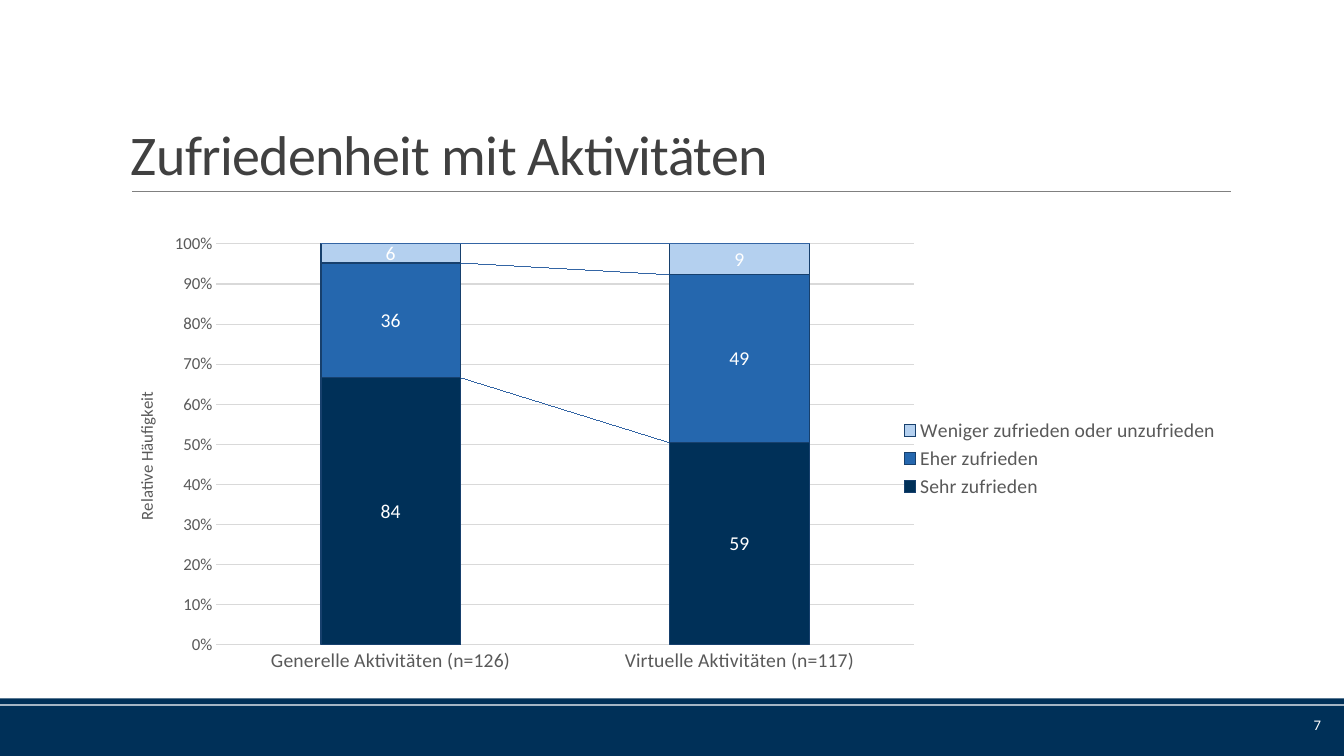
from lxml.etree import SubElement
from pptx import Presentation
from pptx.chart.data import CategoryChartData
from pptx.dml.color import RGBColor
from pptx.enum.chart import XL_CHART_TYPE, XL_LABEL_POSITION, XL_LEGEND_POSITION, XL_TICK_MARK
from pptx.enum.shapes import MSO_CONNECTOR, MSO_SHAPE
from pptx.enum.text import MSO_ANCHOR, PP_ALIGN
from pptx.oxml import parse_xml
from pptx.oxml.ns import nsdecls, qn
from pptx.util import Inches, Pt

NAVY = RGBColor(0x00, 0x30, 0x58)
BLUE = RGBColor(0x25, 0x67, 0xAE)
LIGHT_BLUE = RGBColor(0xB4, 0xD0, 0xEF)
OUTLINE = RGBColor(0x17, 0x40, 0x6D)
TITLE_GRAY = RGBColor(0x40, 0x40, 0x40)
LABEL_GRAY = RGBColor(0x59, 0x59, 0x59)
RULE_GRAY = RGBColor(0x80, 0x80, 0x80)
GRID_GRAY = RGBColor(0xD9, 0xD9, 0xD9)
WHITE = RGBColor(0xFF, 0xFF, 0xFF)

CATEGORIES = ["Generelle Aktivitäten (n=126)", "Virtuelle Aktivitäten (n=117)"]
RATINGS = [
    ("Sehr zufrieden", (84, 59), NAVY),
    ("Eher zufrieden", (36, 49), BLUE),
    ("Weniger zufrieden oder unzufrieden", (6, 9), LIGHT_BLUE),
]


class SlideBuilder:
    font_name = "Calibri"

    def __init__(self, slide):
        self.slide = slide

    def style_font(self, font, size, color):
        font.name = self.font_name
        font.size = Pt(size)
        font.bold = False
        font.color.rgb = color

    def style_line(self, line, color, width):
        line.color.rgb = color
        line.width = Pt(width)

    def band(self, top, height):
        shape = self.slide.shapes.add_shape(
            MSO_SHAPE.RECTANGLE, 0, Inches(top), Inches(13.33), Inches(height))
        shape.shadow.inherit = False
        shape.fill.solid()
        shape.fill.fore_color.rgb = NAVY
        shape.line.fill.background()

    def rule(self, left, right, top):
        connector = self.slide.shapes.add_connector(
            MSO_CONNECTOR.STRAIGHT, Inches(left), Inches(top), Inches(right), Inches(top))
        self.style_line(connector.line, RULE_GRAY, 0.5)
        SubElement(connector._element.spPr, qn("a:effectLst"))

    def text(self, box, words, size, color, anchor, alignment=PP_ALIGN.LEFT,
             line_spacing=1.0, tracking=0):
        shape = self.slide.shapes.add_textbox(*map(Inches, box))
        frame = shape.text_frame
        frame.word_wrap = True
        frame.vertical_anchor = anchor
        paragraph = frame.paragraphs[0]
        paragraph.alignment = alignment
        paragraph.line_spacing = line_spacing
        run = paragraph.add_run()
        run.text = words
        self.style_font(run.font, size, color)
        if tracking:
            run.font._element.set("spc", str(round(tracking * 100)))

    def chart_layout(self, parent, index, target="", **fractions):
        for existing in parent.findall(qn("c:layout")):
            parent.remove(existing)
        layout = parse_xml(f"<c:layout {nsdecls('c')}><c:manualLayout/></c:layout>")
        settings = {"layoutTarget": target} if target else {}
        settings.update(xMode="edge", yMode="edge", **fractions)
        for name, value in settings.items():
            SubElement(layout[0], qn(f"c:{name}")).set("val", str(value))
        parent.insert(index, layout)

    def series_lines(self, plot):
        plot._element.find(qn("c:overlap")).addnext(parse_xml(
            f"<c:serLines {nsdecls('c', 'a')}><c:spPr><a:ln w=\"9525\"><a:solidFill>"
            f"<a:srgbClr val=\"{OUTLINE}\"/></a:solidFill></a:ln></c:spPr></c:serLines>"))

    def value_axis(self, axis, title):
        axis.minimum_scale = 0
        axis.maximum_scale = 1
        axis.major_unit = 0.1
        axis.major_tick_mark = XL_TICK_MARK.NONE
        axis.tick_labels.number_format = "0%"
        axis.tick_labels.number_format_is_linked = False
        self.style_font(axis.tick_labels.font, 12, LABEL_GRAY)
        axis.format.line.fill.background()
        self.style_line(axis.major_gridlines.format.line, GRID_GRAY, 0.75)
        frame = axis.axis_title.text_frame
        frame._txBody.bodyPr.set("rot", "-5400000")
        frame._txBody.bodyPr.set("vert", "horz")
        run = frame.paragraphs[0].add_run()
        run.text = title
        self.style_font(run.font, 12, LABEL_GRAY)
        self.chart_layout(axis.axis_title._element, 1, x=0.01, y=0.35)

    def stacked_chart(self, box, categories, ratings, axis_title):
        data = CategoryChartData()
        data.categories = categories
        for name, values, _ in ratings:
            data.add_series(name, values)
        chart = self.slide.shapes.add_chart(
            XL_CHART_TYPE.COLUMN_STACKED_100, *map(Inches, box), data).chart
        chart.has_title = False
        chart.font.name = self.font_name
        chart.font.size = Pt(10)
        plot = chart.plots[0]
        plot.gap_width = 150
        plot.overlap = 100
        plot.vary_by_categories = False
        self.series_lines(plot)
        for series, (_, _, color) in zip(plot.series, ratings):
            series.format.fill.solid()
            series.format.fill.fore_color.rgb = color
            self.style_line(series.format.line, OUTLINE, 0.75)
            labels = series.data_labels
            labels.show_value = True
            labels.position = XL_LABEL_POSITION.CENTER
            self.style_font(labels.font, 14, WHITE)
        axis = chart.category_axis
        axis.major_tick_mark = XL_TICK_MARK.NONE
        self.style_font(axis.tick_labels.font, 14, LABEL_GRAY)
        self.style_line(axis.format.line, GRID_GRAY, 0.75)
        self.value_axis(chart.value_axis, axis_title)
        chart.has_legend = True
        chart.legend.position = XL_LEGEND_POSITION.RIGHT
        chart.legend.include_in_layout = False
        self.style_font(chart.legend.font, 14, LABEL_GRAY)
        plot_area = chart._chartSpace.chart.plotArea
        self.chart_layout(plot_area, 0, "inner", x=0.086, y=0.037, w=0.629, h=0.865)


def main():
    presentation = Presentation()
    presentation.slide_width = Inches(13.33)
    presentation.slide_height = Inches(7.5)
    builder = SlideBuilder(presentation.slides.add_slide(presentation.slide_layouts[6]))
    builder.band(7, 0.5)
    builder.band(6.93, 0.06)
    builder.rule(1.31, 12.21, 1.9)
    builder.text((1.2, 0.31, 11, 1.59), "Zufriedenheit mit Aktivitäten", 40, TITLE_GRAY,
                 MSO_ANCHOR.BOTTOM, line_spacing=0.85, tracking=-0.5)
    builder.text((11.77, 6.99, 1.43, 0.4), "7", 10.5, WHITE, MSO_ANCHOR.MIDDLE, PP_ALIGN.RIGHT)
    builder.stacked_chart((1.2, 2.25, 11, 4.6), CATEGORIES, RATINGS, "Relative Häufigkeit")
    presentation.save("out.pptx")


if __name__ == "__main__":
    main()
